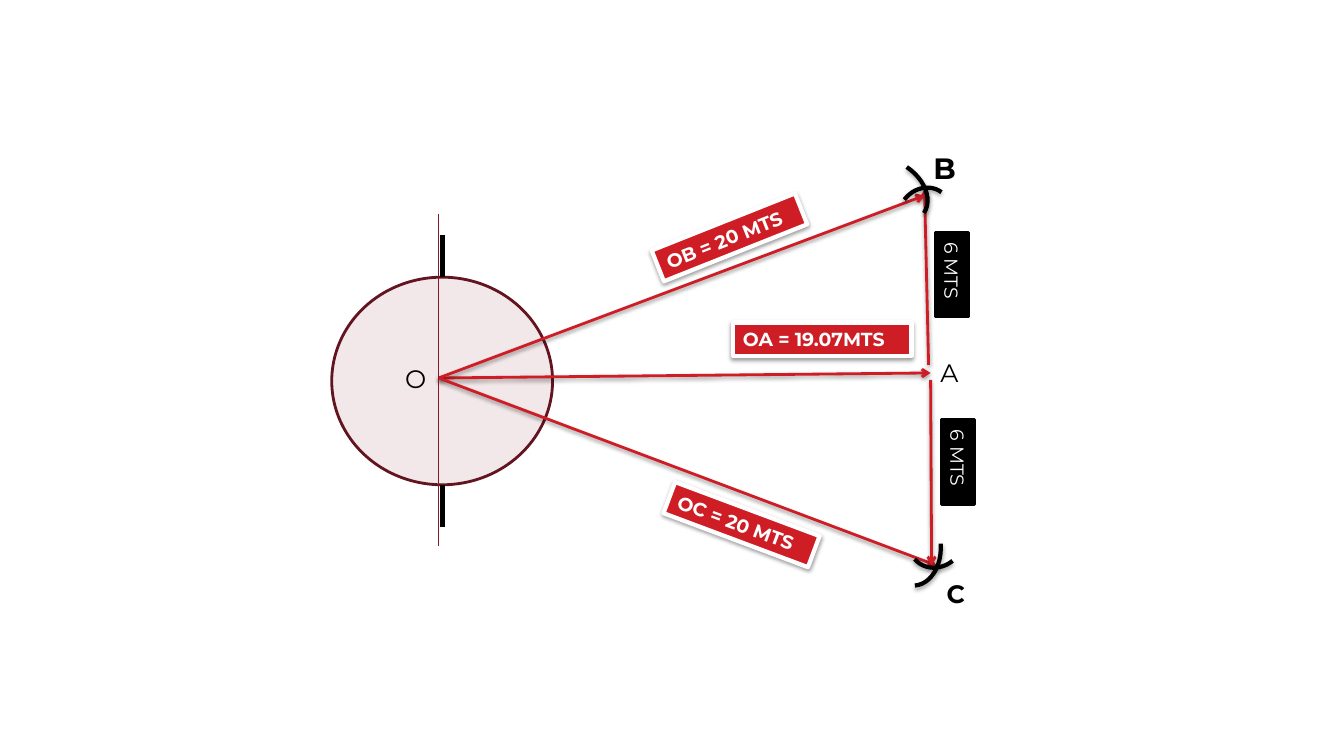
from lxml.etree import SubElement
from pptx import Presentation
from pptx.dml.color import RGBColor
from pptx.enum.shapes import MSO_CONNECTOR, MSO_SHAPE as SHAPE
from pptx.enum.text import MSO_AUTO_SIZE, PP_ALIGN
from pptx.oxml.ns import qn
from pptx.util import Inches, Pt

RED, BLACK, WHITE = "CE1D25", "000000", "FFFFFF"


def rgb(value):
    return RGBColor.from_string(value)


def add_effects(shape, opacity=0, distance=1.6):
    """Replace the theme effects by a soft downward shadow, or by none."""
    effects = SubElement(shape._element.spPr, qn("a:effectLst"))
    if opacity:
        shadow = SubElement(effects, qn("a:outerShdw"), blurRad=str(Pt(3.1)),
                            dist=str(Pt(distance)), dir="5400000", rotWithShape="0")
        color = SubElement(shadow, qn("a:srgbClr"), val=BLACK)
        SubElement(color, qn("a:alpha"), val=str(opacity * 1000))


prs = Presentation()
prs.slide_width, prs.slide_height = Inches(13.33), Inches(7.5)
slide = prs.slides.add_slide(prs.slide_layouts[6])
shapes = slide.shapes

# Circle around O
circle = shapes.add_shape(SHAPE.FLOWCHART_CONNECTOR, Inches(3.29), Inches(2.75),
                          Inches(2.19), Inches(2.06))
circle.fill.solid()
circle.fill.fore_color.rgb = rgb("841D2C")
SubElement(circle.fill._xPr.find(".//" + qn("a:srgbClr")), qn("a:alpha"), val="10000")
circle.line.color.rgb = rgb("621521")
circle.line.width = Pt(2)
add_effects(circle)

# Measured distances as arrows, then the vertical axis and its two ticks
O = (4.35, 3.75)
lines = [
    (O, (9.23, 3.7), RED, 2, True),
    ((9.21, 3.62), (9.17, 1.88), RED, 2, True),
    (O, (9.17, 1.94), RED, 2, True),
    (O, (9.29, 5.61), RED, 2, True),
    ((9.23, 3.77), (9.24, 5.61), RED, 2, True),
    ((4.35, 2.12), (4.35, 5.42), "841A29", 0.75, False),
    ((4.39, 2.75), (4.39, 2.33), BLACK, 3.5, False),
    ((4.39, 5.23), (4.39, 4.81), BLACK, 3.5, False),
]
for start, end, color, width, is_arrow in lines:
    line = shapes.add_connector(MSO_CONNECTOR.STRAIGHT,
                                *(Inches(v) for v in start + end))
    line.line.color.rgb = rgb(color)
    line.line.width = Pt(width)
    if is_arrow:
        SubElement(line.line._get_or_add_ln(), qn("a:tailEnd"), type="arrow")
    add_effects(line, 38 if is_arrow else 0)

# Crossing compass arcs at B and C
arcs = [
    (8.89, 1.88, 0.56, 0.5, 306.9),
    (8.44, 1.61, 0.79, 0.57, 33.6),
    (8.65, 5.13, 0.79, 0.57, 85.8),
    (9.01, 5.12, 0.56, 0.5, 141),
]
for *box, angle in arcs:
    arc = shapes.add_shape(SHAPE.ARC, *(Inches(v) for v in box))
    arc.rotation = angle
    arc.fill.background()
    arc.line.color.rgb = rgb(BLACK)
    arc.line.width = Pt(3)
    add_effects(arc, 35, 1.8)

# Point letters
points = [
    ("O", 3.92, 3.56, 0.41, 0.4, 18, False),
    ("A", 9.23, 3.5, 0.4, 0.4, 18, False),
    ("B", 9.16, 1.44, 0.43, 0.45, 21, True),
    ("C", 9.29, 5.69, 0.4, 0.4, 18, True),
]
for letter, *box, size, bold in points:
    point = shapes.add_textbox(*(Inches(v) for v in box))
    point.text_frame.word_wrap = False
    point.text_frame.auto_size = MSO_AUTO_SIZE.SHAPE_TO_FIT_TEXT
    paragraph = point.text_frame.paragraphs[0]
    paragraph.text = letter
    paragraph.font.name = "Montserrat"
    paragraph.font.size = Pt(size)
    paragraph.font.bold = bold
    paragraph.font.color.rgb = rgb(BLACK)

# Distance labels: red with a white frame, or black
labels = [
    ("OA = 19.07MTS", 7.27, 3.2, 1.77, 0, RED),
    ("6 MTS", 9.02, 2.56, 0.84, 90, BLACK),
    ("6 MTS", 9.08, 4.42, 0.84, 90, BLACK),
    ("OB = 20 MTS", 6.47, 2.19, 1.53, 338.3, RED),
    ("OC = 20 MTS", 6.59, 5.04, 1.53, 20.5, RED),
]
for text, left, top, width, angle, color in labels:
    is_red = color == RED
    label = shapes.add_shape(SHAPE.RECTANGLE, Inches(left), Inches(top),
                             Inches(width), Inches(0.33))
    label.rotation = angle
    label.fill.solid()
    label.fill.fore_color.rgb = rgb(color)
    label.line.color.rgb = rgb(WHITE if is_red else BLACK)
    label.line.width = Pt(3 if is_red else 2)
    add_effects(label, 38 if is_red else 0)
    label.text_frame.word_wrap = False
    paragraph = label.text_frame.paragraphs[0]
    paragraph.text = text
    paragraph.alignment = PP_ALIGN.LEFT
    paragraph.font.name = "Montserrat"
    paragraph.font.size = Pt(13.5)
    paragraph.font.bold = is_red
    paragraph.font.color.rgb = rgb(WHITE)

prs.save("out.pptx")
